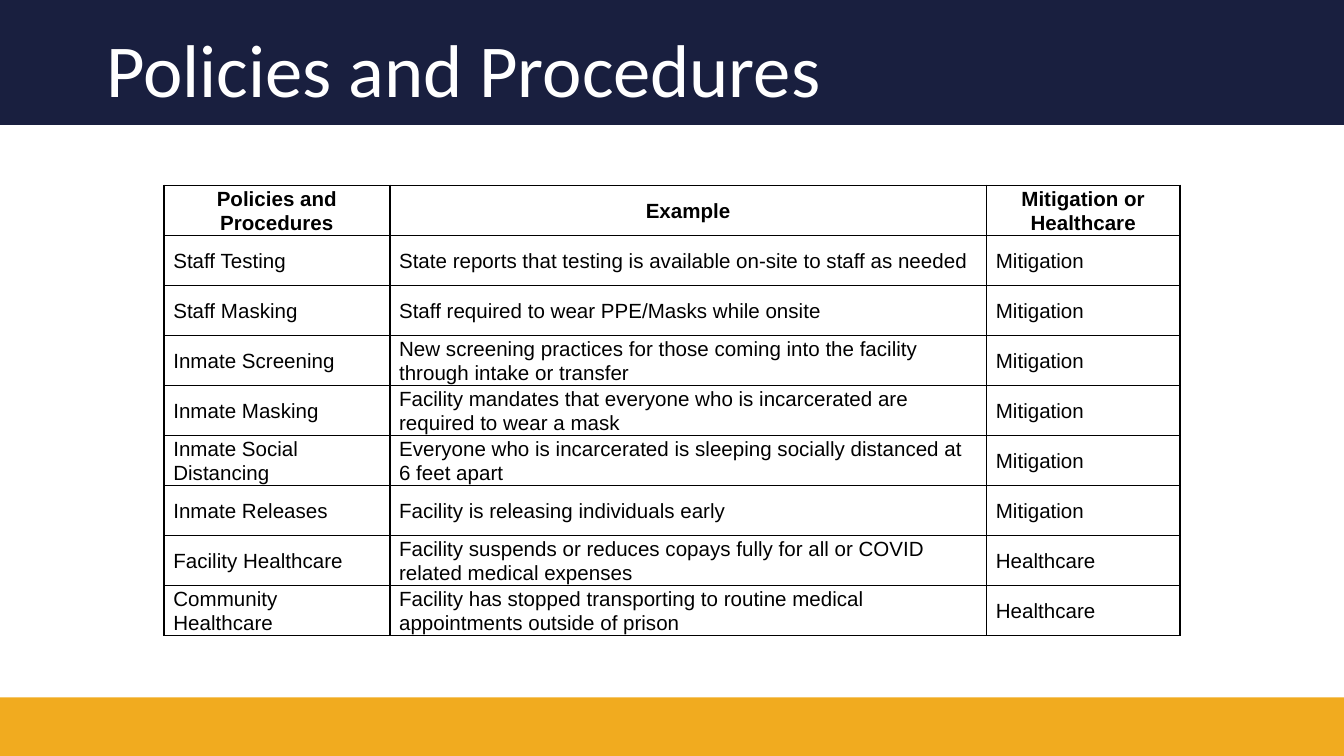
from dataclasses import dataclass

from lxml import etree
from pptx import Presentation
from pptx import util as u
from pptx.dml.color import RGBColor
from pptx.enum import shapes, text
from pptx.oxml import ns


@dataclass(frozen=True)
class Theme:
    navy: str = "191F3F"
    gold: str = "F1AB1F"
    white: str = "FFFFFF"
    black: str = "000000"
    title_font: str = "Calibri"
    body_font: str = "Arial"
    title_size: int = 40
    body_size: int = 11
    border_pt: int = 1


HEADER = ("Policies and Procedures", "Example", "Mitigation or Healthcare")
POLICIES = {
    "Mitigation": (
        ("Staff Testing", "State reports that testing is available on-site to staff as needed"),
        ("Staff Masking", "Staff required to wear PPE/Masks while onsite"),
        ("Inmate Screening", "New screening practices for those coming into the facility "
                             "through intake or transfer"),
        ("Inmate Masking", "Facility mandates that everyone who is incarcerated are "
                           "required to wear a mask"),
        ("Inmate Social Distancing", "Everyone who is incarcerated is sleeping socially "
                                     "distanced at 6 feet apart"),
        ("Inmate Releases", "Facility is releasing individuals early"),
    ),
    "Healthcare": (
        ("Facility Healthcare", "Facility suspends or reduces copays fully for all or COVID "
                                "related medical expenses"),
        ("Community Healthcare", "Facility has stopped transporting to routine medical "
                                 "appointments outside of prison"),
    ),
}
COL_WIDTHS = (1.68, 4.44, 1.44)
TABLE_HEIGHT = 3.35


class SlideBuilder:
    def __init__(self, slide, theme):
        self.s = slide
        self.theme = theme

    def style(self, p, font, size, color, bold=False):
        p.font.name = font
        p.font.size = u.Pt(size)
        p.font.bold = bold
        p.font.color.rgb = RGBColor.from_string(color)

    def bar(self, top, height, color):
        sp = self.s.shapes.add_shape(shapes.MSO_SHAPE.RECTANGLE, 0, u.Inches(top),
                                     u.Inches(10), u.Inches(height))
        sp.shadow.inherit = False
        sp.fill.solid()
        sp.fill.fore_color.rgb = RGBColor.from_string(color)
        sp.line.fill.background()

    def title(self, words, left, top, width, height):
        """Fill the title placeholder and bring it in front of the bars."""
        sp = self.s.shapes.title
        sp.left, sp.top = u.Inches(left), u.Inches(top)
        sp.width, sp.height = u.Inches(width), u.Inches(height)
        tf = sp.text_frame
        tf.text = words
        tf.auto_size = text.MSO_AUTO_SIZE.NONE
        tf.vertical_anchor = text.MSO_ANCHOR.MIDDLE
        p = tf.paragraphs[0]
        p.alignment = text.PP_ALIGN.LEFT
        p.line_spacing = 0.9
        self.style(p, self.theme.title_font, self.theme.title_size, self.theme.white)
        sp.element.getparent().append(sp.element)

    def borders(self, cell):
        tc_pr = cell._tc.get_or_add_tcPr()
        for side in ("lnL", "lnR", "lnT", "lnB"):
            ln = etree.SubElement(tc_pr, ns.qn(f"a:{side}"),
                                  w=str(u.Pt(self.theme.border_pt)))
            fill = etree.SubElement(ln, ns.qn("a:solidFill"))
            etree.SubElement(fill, ns.qn("a:srgbClr"), val=self.theme.black)

    def cell(self, cell, words, is_header):
        self.borders(cell)
        cell.fill.background()
        cell.margin_left = cell.margin_right = u.Inches(0.07)
        cell.margin_top = cell.margin_bottom = 0
        cell.vertical_anchor = text.MSO_ANCHOR.MIDDLE
        cell.text = words
        p = cell.text_frame.paragraphs[0]
        p.alignment = text.PP_ALIGN.CENTER if is_header else text.PP_ALIGN.LEFT
        p.line_spacing = 1.07
        self.style(p, self.theme.body_font, self.theme.body_size, self.theme.black, is_header)

    def table(self, rows, left, top, col_widths, height):
        table = self.s.shapes.add_table(
            len(rows), len(col_widths), u.Inches(left), u.Inches(top),
            u.Inches(sum(col_widths)), u.Inches(height)).table
        table.horz_banding = False
        for col, width in zip(table.columns, col_widths):
            col.width = u.Inches(width)
        for i, (row, values) in enumerate(zip(table.rows, rows)):
            for cell, words in zip(row.cells, values):
                self.cell(cell, words, is_header=i == 0)


def main():
    prs = Presentation()
    prs.slide_width = u.Inches(10)
    prs.slide_height = prs.slide_width * 9 // 16
    theme = Theme()
    slide = SlideBuilder(prs.slides.add_slide(prs.slide_layouts[5]), theme)

    slide.bar(5.19, 0.44, theme.gold)
    slide.bar(0, 0.93, theme.navy)
    slide.title("Policies and Procedures", 0.69, 0, 8.62, 1.09)
    rows = [HEADER] + [(policy, example, kind)
                       for kind, items in POLICIES.items() for policy, example in items]
    slide.table(rows, 1.22, 1.38, COL_WIDTHS, TABLE_HEIGHT)

    prs.save("out.pptx")


if __name__ == "__main__":
    main()
